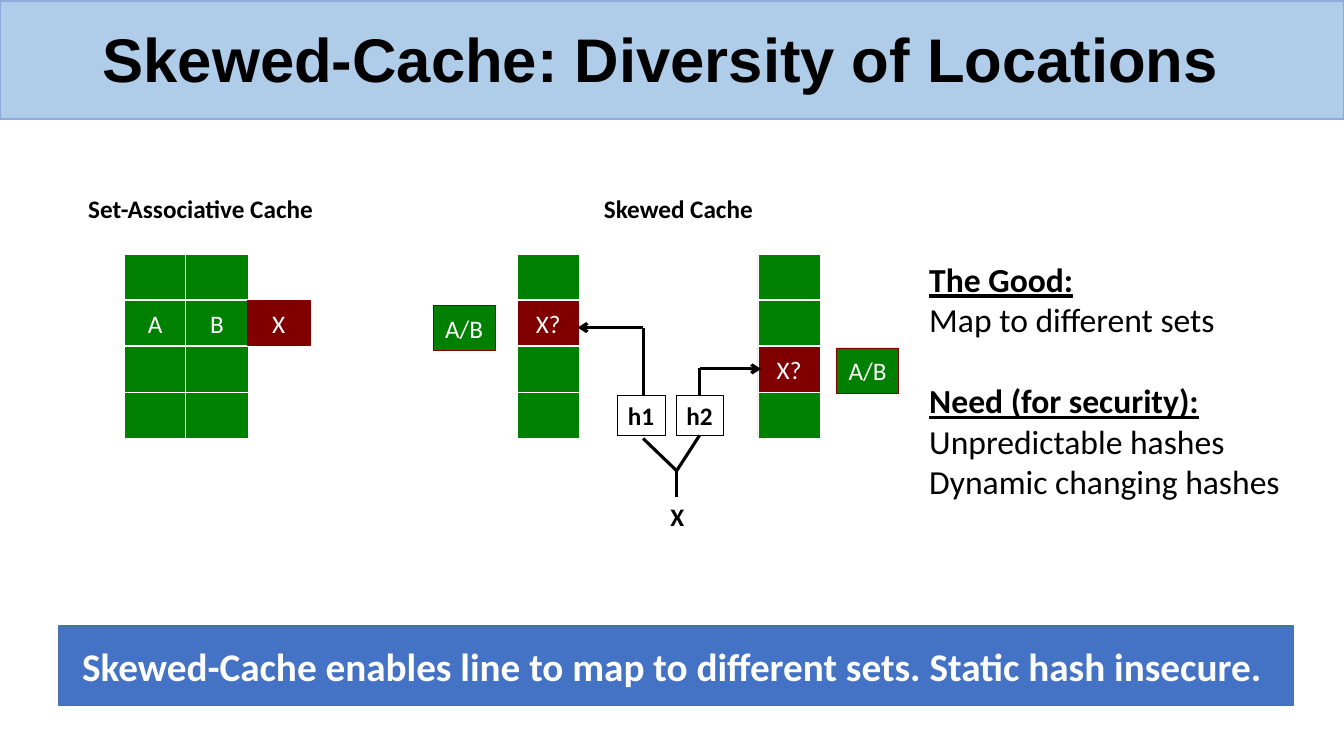
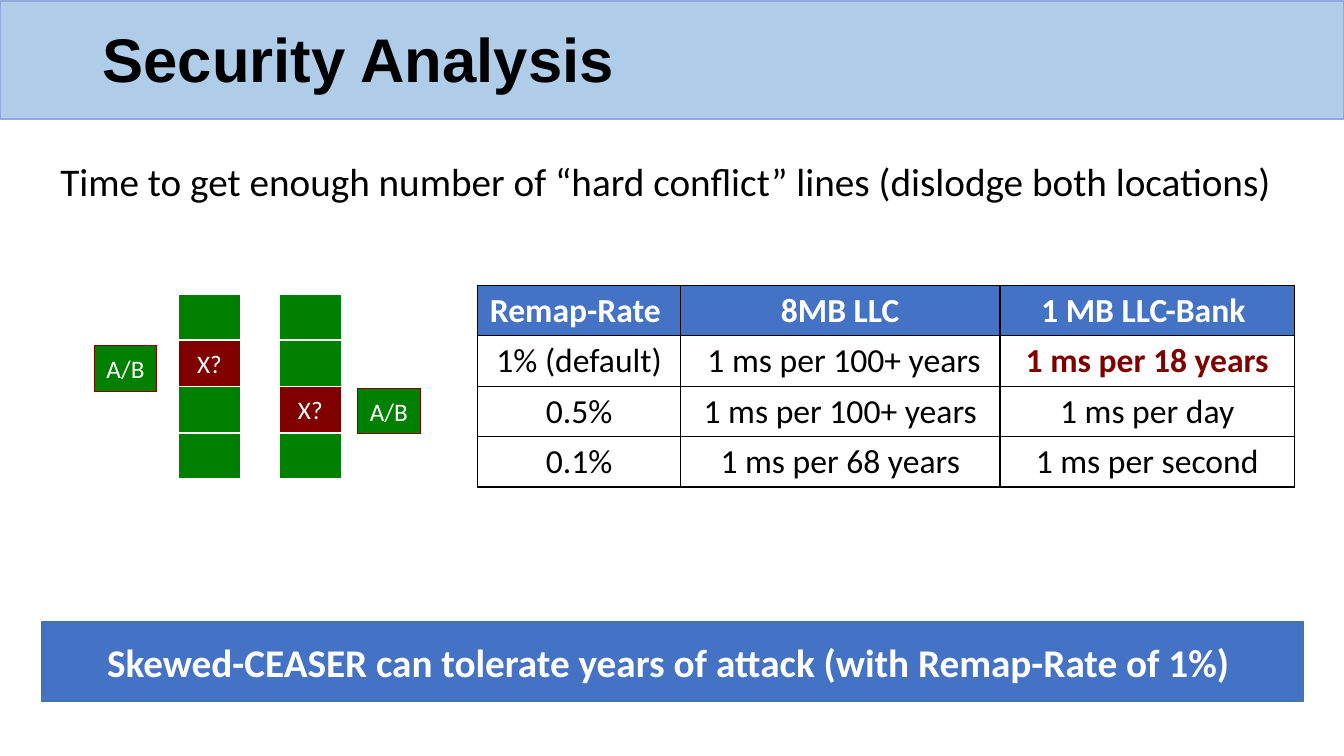
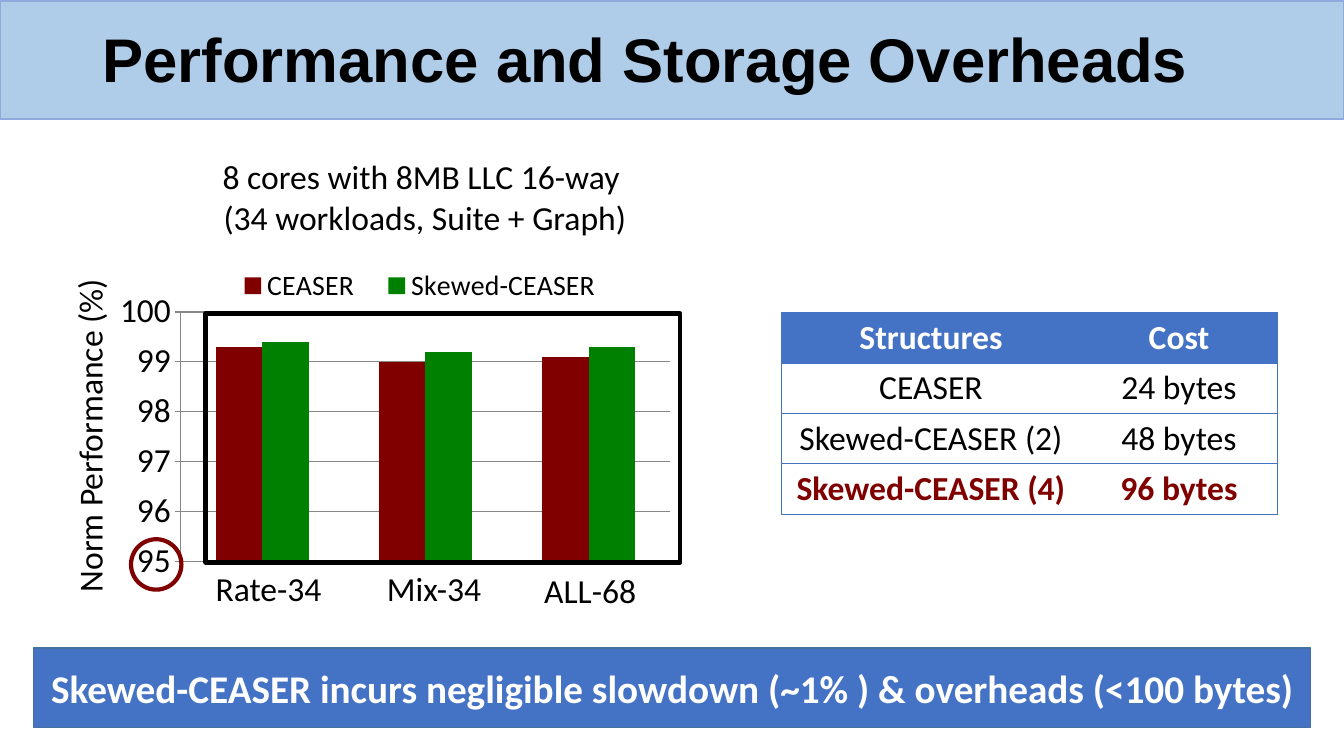
"""Builds three slides on the skewed cache: idea, security and overheads."""
from dataclasses import dataclass
from typing import Optional

from lxml import etree
from pptx import Presentation
from pptx.chart.data import CategoryChartData
from pptx.dml.color import RGBColor
from pptx.enum.chart import XL_CHART_TYPE, XL_LEGEND_POSITION, XL_TICK_MARK
from pptx.enum.shapes import MSO_CONNECTOR, MSO_SHAPE
from pptx.enum.text import MSO_ANCHOR, MSO_AUTO_SIZE, PP_ALIGN
from pptx.oxml.ns import qn
from pptx.util import Emu, Inches, Pt

RECTANGLE, OVAL = MSO_SHAPE.RECTANGLE, MSO_SHAPE.OVAL
STRAIGHT = MSO_CONNECTOR.STRAIGHT
LEFT, CENTER = PP_ALIGN.LEFT, PP_ALIGN.CENTER
TOP, MIDDLE = MSO_ANCHOR.TOP, MSO_ANCHOR.MIDDLE
GROW = MSO_AUTO_SIZE.SHAPE_TO_FIT_TEXT
CLUSTERED = XL_CHART_TYPE.COLUMN_CLUSTERED
LEGEND_TOP = XL_LEGEND_POSITION.TOP
TICK_OUT = XL_TICK_MARK.OUTSIDE

BLACK = RGBColor(0x00, 0x00, 0x00)
WHITE = RGBColor(0xFF, 0xFF, 0xFF)
GREEN = RGBColor(0x00, 0x80, 0x00)
MAROON = RGBColor(0x80, 0x00, 0x00)
BLUE = RGBColor(0x44, 0x72, 0xC4)
BLUE_EDGE = RGBColor(0x43, 0x73, 0x9E)
BAND = RGBColor(0xAF, 0xCC, 0xE9)
BAND_EDGE = RGBColor(0x8F, 0xAA, 0xDC)
GRAY = RGBColor(0x87, 0x87, 0x87)

BODY_FONT, TITLE_FONT = "Calibri", "Arial"
SLIDE_W, SLIDE_H = Inches(13.33), Inches(7.5)
WAY_PITCH, SET_PITCH = 4.6, 6.12
LINE_W, LINE_H = 4.63, 6.0
TABLE_ROW = 6.67
SETS = 4


def across(share: float) -> Emu:
    """Turn a percentage of the slide's width into a length."""
    return Emu(round(SLIDE_W * share / 100))


def down(share: float) -> Emu:
    """Turn a percentage of the slide's height into a length."""
    return Emu(round(SLIDE_H * share / 100))


@dataclass(frozen=True)
class Box:
    """A place on the slide in percent of its width and height."""
    left: float
    top: float
    width: float
    height: float

    def lengths(self) -> tuple:
        """Return left, top, width and height as lengths."""
        return across(self.left), down(self.top), across(self.width), down(self.height)


@dataclass(frozen=True)
class Style:
    """The look of a piece of text."""
    size: float = 24
    color: RGBColor = BLACK
    bold: bool = False
    underline: bool = False
    align: PP_ALIGN = LEFT
    font: str = BODY_FONT
    space_before: float = 0


@dataclass(frozen=True)
class Wire:
    """A straight line between two points, with an optional arrowhead."""
    x1: float
    y1: float
    x2: float
    y2: float
    arrow: bool = False


@dataclass(frozen=True)
class Grid:
    """A table with the cells to stress."""
    left: float
    top: float
    columns: tuple
    rows: tuple
    stressed: tuple
    border: RGBColor
    border_width: float
    inner_verticals: bool


PLAIN = Style()
PLAIN_CENTER = Style(align=CENTER)
HEADING = Style(bold=True, underline=True)
NEXT_HEADING = Style(bold=True, underline=True, space_before=29)
LABEL = Style(18, bold=True)
LABEL_CENTER = Style(18, bold=True, align=CENTER)
CACHE_TEXT = Style(18, WHITE, align=CENTER)
TAKEAWAY = Style(28, WHITE, True, align=CENTER)
LEAD = Style(28)
TITLE = Style(44, bold=True, font=TITLE_FONT)
TABLE_HEAD = Style(color=WHITE, bold=True, align=CENTER)
TABLE_STRESS = Style(color=MAROON, bold=True, align=CENTER)


def set_font(font, style: Style) -> None:
    """Apply a style to a font."""
    font.name, font.size = style.font, Pt(style.size)
    font.bold, font.underline = style.bold, style.underline
    font.color.rgb = style.color


def write(frame, *lines: tuple) -> None:
    """Fill a text frame with one paragraph per (text, style) pair."""
    for index, (text, style) in enumerate(lines):
        paragraph = frame.add_paragraph() if index else frame.paragraphs[0]
        paragraph.text = text
        paragraph.alignment = style.align
        if style.space_before:
            paragraph.space_before = Pt(style.space_before)
        set_font(paragraph.font, style)


def add_text(slide, box: Box, *lines: tuple, wrap: bool = False, turn: float = 0) -> None:
    """Add a text box that grows with its text."""
    label = slide.shapes.add_textbox(*box.lengths())
    label.rotation = turn
    label.text_frame.word_wrap = wrap
    label.text_frame.auto_size = GROW
    write(label.text_frame, *lines)


def add_block(slide, box: Box, fill: Optional[RGBColor], edge: RGBColor, weight: float,
              text: str = "", style: Style = CACHE_TEXT, wrap: bool = False,
              kind: MSO_SHAPE = RECTANGLE, anchor: MSO_ANCHOR = MIDDLE) -> None:
    """Add an outlined shape, filled and lettered on demand."""
    block = slide.shapes.add_shape(kind, *box.lengths())
    block.shadow.inherit = False
    if fill is None:
        block.fill.background()
    else:
        block.fill.solid()
        block.fill.fore_color.rgb = fill
    block.line.color.rgb, block.line.width = edge, Pt(weight)
    if text:
        block.text_frame.word_wrap = wrap
        block.text_frame.vertical_anchor = anchor
        write(block.text_frame, (text, style))


def add_wire(slide, wire: Wire) -> None:
    """Draw one wire of the hash diagram."""
    line = slide.shapes.add_connector(STRAIGHT, across(wire.x1), down(wire.y1),
                                      across(wire.x2), down(wire.y2))
    line.line.color.rgb, line.line.width = BLACK, Pt(2.25)
    properties = line._element.spPr
    if wire.arrow:
        etree.SubElement(properties.find(qn("a:ln")), qn("a:tailEnd"), type="arrow")
    etree.SubElement(properties, qn("a:effectLst"))


def start_slide(deck, title: str, takeaway: str, takeaway_box: Box):
    """Add a slide with its title band and its takeaway bar."""
    slide = deck.slides.add_slide(deck.slide_layouts[6])
    add_block(slide, Box(0, 0.13, 100, 15.6), BAND, BAND_EDGE, 1)
    heading = slide.shapes.add_textbox(*Box(6.9, 3.07, 88.2, 10.4).lengths()).text_frame
    heading.word_wrap, heading.vertical_anchor = True, MIDDLE
    write(heading, (title, TITLE))
    heading.paragraphs[0].line_spacing = 0.9
    add_block(slide, takeaway_box, BLUE, BLUE_EDGE, 1, takeaway, TAKEAWAY, wrap=True)
    return slide


def add_line(slide, left: float, top: float, way: float, row: float, text: str = "",
             fill: RGBColor = GREEN, edge: RGBColor = WHITE) -> None:
    """Add a cache line at a way and a set of the cache that starts at left, top."""
    box = Box(left + way * WAY_PITCH, top + row * SET_PITCH, LINE_W, LINE_H)
    add_block(slide, box, fill, edge, 0.5, text)


def add_skewed_cache(slide, first: float, second: float, top: float) -> None:
    """Add two skewed ways with the candidate places of X and the evicted lines."""
    for left, x_row in ((first, 1), (second, 2)):
        for row in range(SETS):
            hit = row == x_row
            add_line(slide, left, top, 0, row, "X?" if hit else "", MAROON if hit else GREEN)
    for left, way, row in ((first, -1.36, 1.11), (second, 1.27, 2.03)):
        add_line(slide, left, top, way, row, "A/B", edge=MAROON)


def add_border(cell, sides: str, color: RGBColor, width: float) -> None:
    """Draw the given sides of a cell and hide the others."""
    properties = cell._tc.get_or_add_tcPr()
    for side in "LRTB":
        shown = side in sides
        line = etree.SubElement(properties, qn(f"a:ln{side}"), w=str(Pt(width) if shown else 0))
        paint = etree.SubElement(line, qn("a:solidFill" if shown else "a:noFill"))
        if shown:
            etree.SubElement(paint, qn("a:srgbClr"), val=str(color))


def add_grid(slide, grid: Grid) -> None:
    """Add a table with a blue head row."""
    box = Box(grid.left, grid.top, sum(grid.columns), TABLE_ROW * len(grid.rows))
    last = len(grid.columns) - 1
    table = slide.shapes.add_table(len(grid.rows), last + 1, *box.lengths()).table
    table.horz_banding = False
    for column, width in zip(table.columns, grid.columns):
        column.width = across(width)
    for r, texts in enumerate(grid.rows):
        table.rows[r].height = down(TABLE_ROW)
        for c, text in enumerate(texts):
            cell = table.cell(r, c)
            left = "L" if c == 0 or grid.inner_verticals else ""
            right = "R" if c == last or grid.inner_verticals else ""
            add_border(cell, "TB" + left + right, grid.border, grid.border_width)
            cell.fill.solid()
            cell.fill.fore_color.rgb = WHITE if r else BLUE
            body = TABLE_STRESS if (r, c) in grid.stressed else PLAIN_CENTER
            write(cell.text_frame, (text, body if r else TABLE_HEAD))


def place_part(part, index: int, inner: bool, **shares: float) -> None:
    """Fix the place of a chart part in shares of the chart."""
    for old in part.findall(qn("c:layout")):
        part.remove(old)
    layout = etree.Element(qn("c:layout"))
    manual = etree.SubElement(layout, qn("c:manualLayout"))
    if inner:
        etree.SubElement(manual, qn("c:layoutTarget"), val="inner")
    for axis in "xy":
        etree.SubElement(manual, qn(f"c:{axis}Mode"), val="edge")
    for name, share in shares.items():
        etree.SubElement(manual, qn(f"c:{name}"), val=str(share))
    part.insert(index, layout)


def add_performance_chart(slide, box: Box) -> None:
    """Add the column chart of normalized performance."""
    data = CategoryChartData()
    data.categories = ["1", "2", "3"]
    data.add_series("CEASER", (99.3, 99, 99.1))
    data.add_series("Skewed-CEASER", (99.4, 99.2, 99.3))
    chart = slide.shapes.add_chart(CLUSTERED, *box.lengths(), data).chart
    set_font(chart.font, Style(10))
    chart.has_title = False
    chart.has_legend = True
    chart.legend.position = LEGEND_TOP
    chart.legend.include_in_layout = False
    set_font(chart.legend.font, Style(20))
    chart.category_axis.visible = False
    axis = chart.value_axis
    axis.minimum_scale, axis.maximum_scale, axis.major_unit = 95, 100, 1
    axis.major_tick_mark = TICK_OUT
    set_font(axis.tick_labels.font, PLAIN)
    for line in (axis.format.line, axis.major_gridlines.format.line):
        line.color.rgb, line.width = GRAY, Pt(0.75)
    plot = chart.plots[0]
    plot.gap_width, plot.overlap, plot.vary_by_categories = 150, 0, False
    for series, color in zip(plot.series, (MAROON, GREEN)):
        series.format.fill.solid()
        series.format.fill.fore_color.rgb = color
    space = chart._chartSpace
    place_part(space.find(".//" + qn("c:plotArea")), 0, True, x=0.1, y=0.18, w=0.88, h=0.76)
    place_part(space.find(".//" + qn("c:legend")), 1, False, x=0.17, y=0.04, w=0.72, h=0.12)


def build_diversity(deck) -> None:
    """Compare the set-associative cache with the skewed cache."""
    slide = start_slide(deck, "Skewed-Cache: Diversity of Locations",
                        "Skewed-Cache enables line to map to different sets. Static hash insecure. ",
                        Box(4.35, 82.8, 91.9, 10.5))
    top, left = 33.6, 9.23
    for row in range(SETS):
        for way in range(2):
            add_line(slide, left, top, way, row, "AB"[way] if row == 1 else "")
    add_line(slide, left, top, 2, 1, "X", MAROON, MAROON)
    add_skewed_cache(slide, 38.48, 56.4, top)
    add_text(slide, Box(5.63, 24.93, 18.6, 5.33), ("Set-Associative Cache", LABEL_CENTER))
    add_text(slide, Box(44.1, 24.93, 12.75, 5.33), ("Skewed Cache", LABEL_CENTER))
    h1, h2, fork = 47.85, 52.05, 50.35
    for wire in (Wire(h2, 48.8, 56.63, 48.8, True), Wire(h1, 43.33, 42.98, 43.33, True),
                 Wire(h2, 48.7, h2, 52.27), Wire(h1, 43.33, h1, 52.27),
                 Wire(h1, 58, fork, 62.27), Wire(h2, 57.6, fork, 62.27),
                 Wire(fork, 62.27, fork, 65.73)):
        add_wire(slide, wire)
    for name, hash_left in (("h1", 45.98), ("h2", 50.33)):
        add_block(slide, Box(hash_left, 52.27, 3.53, 5.33), None, BLACK, 0.75, name, LABEL,
                  anchor=TOP)
    add_text(slide, Box(49.13, 65.6, 2.55, 5.33), ("X", LABEL))
    add_text(slide, Box(68.4, 33.6, 27.83, 33.6),
             ("The Good:", HEADING), ("Map to different sets", PLAIN),
             ("Need (for security):", NEXT_HEADING), ("Unpredictable hashes", PLAIN),
             ("Dynamic changing hashes", PLAIN))


def build_security(deck) -> None:
    """Show how long an attack takes at each remap rate."""
    slide = start_slide(deck, "Security Analysis",
                        "Skewed-CEASER can tolerate years of attack (with Remap-Rate of 1%) ",
                        Box(3.08, 82.27, 93.9, 10.5))
    add_text(slide, Box(3.75, 20.13, 92.5, 7.6),
             ("Time to get enough number of “hard conflict” lines (dislodge both locations)", LEAD),
             wrap=True)
    add_skewed_cache(slide, 13.28, 20.78, 38.93)
    add_grid(slide, Grid(35.55, 37.73, (15.08, 23.78, 21.9), (
        ("Remap-Rate ", "8MB LLC", "1 MB LLC-Bank "),
        ("1% (default)", " 1 ms per 100+ years", "1 ms per 18 years"),
        ("0.5%", "1 ms per 100+ years", "1 ms per day"),
        ("0.1%", "1 ms per 68 years", "1 ms per second"),
    ), ((1, 2),), BLACK, 1, True))


def build_overheads(deck) -> None:
    """Show the slowdown and the storage cost."""
    slide = start_slide(deck, "Performance and Storage Overheads",
                        "Skewed-CEASER incurs negligible slowdown (~1% ) & overheads (<100 bytes)",
                        Box(2.48, 85.73, 95.03, 10.5))
    add_performance_chart(slide, Box(8.93, 33.47, 41.78, 43.47))
    for name, left, top, width in (("Rate-34", 15.3, 74.4, 9.53), ("Mix-34", 28.05, 74.4, 8.7),
                                   ("ALL-68", 39.75, 74.67, 8.4)):
        add_text(slide, Box(left, top, width, 6.67), (name, PLAIN))
    add_text(slide, Box(-5.93, 54, 25.13, 6.67), ("Norm Performance (%)", PLAIN), turn=270)
    add_text(slide, Box(15.75, 20, 31.73, 12.13),
             ("8 cores with 8MB LLC 16-way ", PLAIN_CENTER),
             ("(34 workloads, Suite + Graph)", PLAIN_CENTER))
    add_grid(slide, Grid(58.13, 41.33, (22.28, 14.63), (
        ("Structures", "Cost"),
        ("CEASER", "24 bytes"),
        ("Skewed-CEASER (2)", "48 bytes"),
        ("Skewed-CEASER (4)", "96 bytes"),
    ), ((3, 0), (3, 1)), BLUE, 0.5, False))
    add_block(slide, Box(15.3, 41.47, 35.33, 32.93), None, BLACK, 3)
    add_block(slide, Box(9.75, 71.33, 3.75, 6.67), None, MAROON, 3, kind=OVAL)


def main() -> None:
    """Build the deck and save it."""
    deck = Presentation()
    deck.slide_width, deck.slide_height = SLIDE_W, SLIDE_H
    for build in (build_diversity, build_security, build_overheads):
        build(deck)
    deck.save("out.pptx")


if __name__ == "__main__":
    main()
